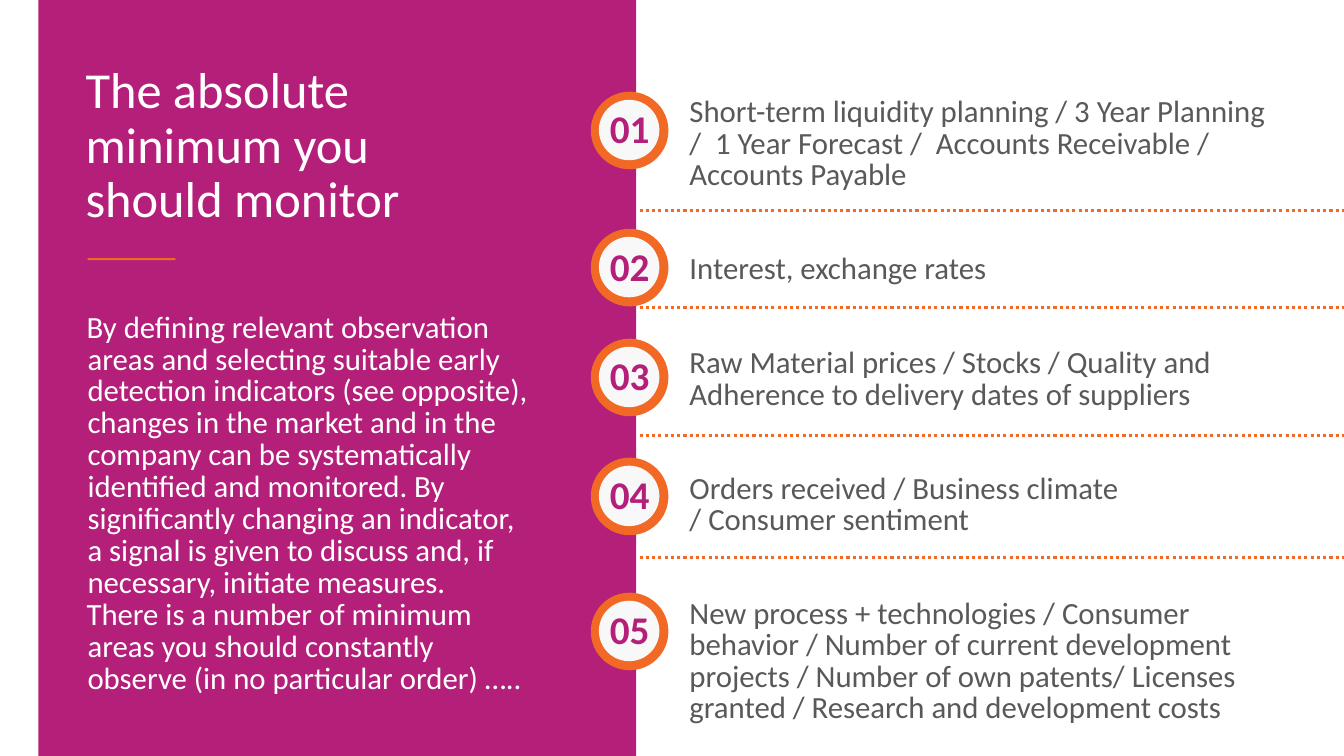
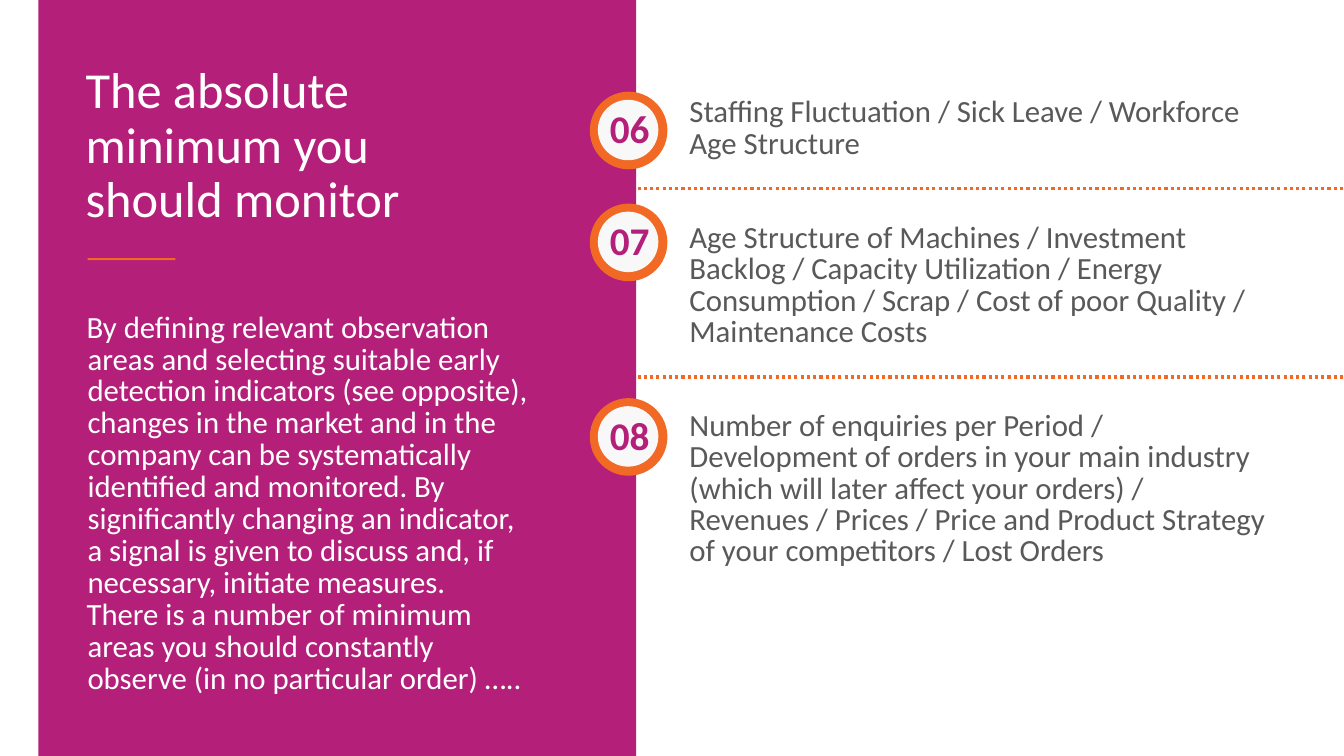
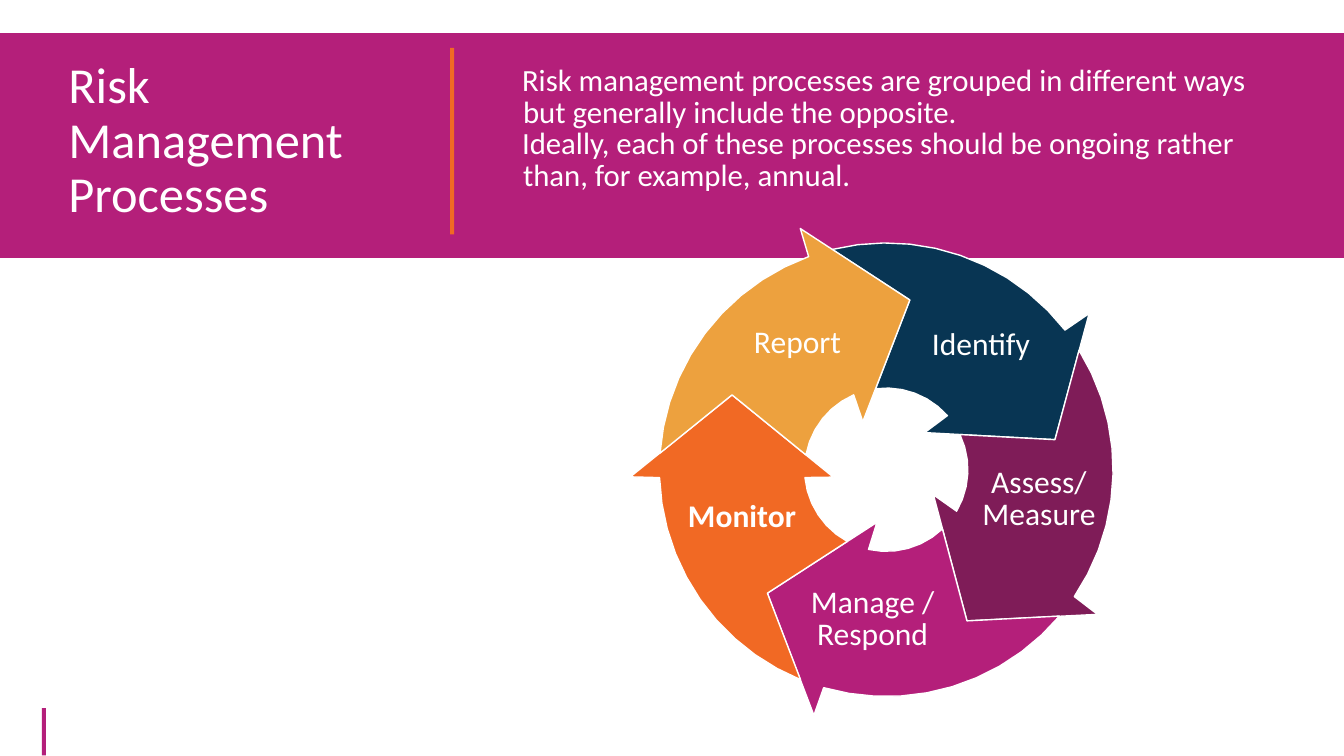
"""Build three slides on risk indicators and the risk management cycle."""
from dataclasses import dataclass
from math import cos, radians, sin

from lxml.etree import SubElement
from pptx import Presentation
from pptx.dml.color import RGBColor as RGB
from pptx.enum.dml import MSO_LINE
from pptx.enum.shapes import MSO_CONNECTOR as CONN, MSO_SHAPE as SHAPE
from pptx.enum.text import MSO_ANCHOR as ANCHOR, PP_ALIGN as ALIGN
from pptx.oxml.ns import qn
from pptx.util import Inches, Pt


@dataclass(frozen=True)
class Theme:
    font: str = "Calibri"
    magenta: str = "B41F7A"
    orange: str = "F16924"
    navy: str = "083553"
    plum: str = "7F1C58"
    amber: str = "EDA13E"
    white: str = "FFFFFF"
    disc: str = "F8F8F8"
    grey: str = "595959"
    title: float = 36
    badge: float = 28
    label: float = 22.5
    body: float = 22
    title_leading: float = 0.9
    body_leading: Pt = Pt(22.8)
    row_leading: Pt = Pt(22.4)
    label_leading: Pt = Pt(23)


T = Theme()


def add_block(shapes, kind, box, color):
    """Add a filled shape without outline or shadow."""
    sp = shapes.add_shape(kind, *map(Inches, box))
    sp.shadow.inherit = False
    sp.fill.solid()
    sp.fill.fore_color.rgb = RGB.from_string(color)
    sp.line.fill.background()
    return sp


def add_text(shapes, box, groups, size, color, leading=None, gap=0, bold=False, align=ALIGN.LEFT, hang=0):
    """Add a text box of paragraph groups, with a gap before each group but the first."""
    tf = shapes.add_textbox(*map(Inches, box)).text_frame
    tf.word_wrap = True
    p = None
    for group in groups:
        for j, text in enumerate(group):
            first = p is None
            p = tf.paragraphs[0] if first else tf.add_paragraph()
            p.alignment = align
            if leading:
                p.line_spacing = leading
            if gap and j == 0 and not first:
                p.space_before = gap
            if hang:
                pPr = p._p.get_or_add_pPr()
                pPr.set("marL", str(hang))
                pPr.set("indent", str(-hang))
            for k, part in enumerate(text.split("\v")):
                if k:
                    p.add_line_break()
                r = p.add_run()
                r.text = part
                r.font.name = T.font
                r.font.size = Pt(size)
                r.font.bold = bold
                r.font.color.rgb = RGB.from_string(color)
    return tf


prs = Presentation()
prs.slide_width, prs.slide_height = Inches(13.33), Inches(7.5)
blank = prs.slide_layouts[6]
hang = Inches(0.01)

intro = [[
    "By defining relevant observation areas and selecting suitable early detection indicators "
    "(see opposite), changes in the market and in the company can be systematically identified "
    "and monitored. By significantly changing an indicator, a signal is given to discuss and, "
    "if necessary, initiate measures.",
    "There is a number of minimum areas you should constantly observe (in no particular order) …..",
]]

indicator_slides = [
    {
        "first": 1,
        "badge_x": 5.86,
        "badges": [0.91, 2.27, 3.36, 4.54, 5.88],
        "rule_x": 5.97,
        "rules": [2.09, 3.05, 4.32, 5.53],
        "height": 6.4,
        "rows": [
            ["Short-term liquidity planning / 3 Year Planning /  1 Year Forecast /  "
             "Accounts Receivable / Accounts Payable"],
            ["Interest, exchange rates"],
            ["Raw Material prices / Stocks / Quality and Adherence to delivery dates of suppliers"],
            ["Orders received / Business climate", "/ Consumer sentiment"],
            ["New process + technologies / Consumer behavior / Number of current development "
             "projects / Number of own patents/ Licenses granted / Research and development costs"],
        ],
    },
    {
        "first": 6,
        "badge_x": 5.85,
        "badges": [0.91, 2.02, 3.95],
        "rule_x": 5.95,
        "rules": [1.87, 3.74],
        "height": 5.35,
        "rows": [
            ["Staffing Fluctuation / Sick Leave / Workforce Age Structure"],
            ["Age Structure of Machines / Investment Backlog / Capacity Utilization / Energy "
             "Consumption / Scrap / Cost of poor Quality /  Maintenance Costs"],
            ["Number of enquiries per Period / Development of orders in your main industry "
             "(which will later affect your orders) / Revenues / Prices / Price and Product "
             "Strategy of your competitors / Lost Orders"],
        ],
    },
]

ring_d, disc_d, rim = 0.77, 0.6, 0.08

for content in indicator_slides:
    shapes = prs.slides.add_slide(blank).shapes
    for y in content["rules"]:
        rule = shapes.add_connector(
            CONN.STRAIGHT, Inches(content["rule_x"]), Inches(y), Inches(13.33), Inches(y))
        rule.line.color.rgb = RGB.from_string(T.orange)
        rule.line.width = Pt(2.25)
        rule.line.dash_style = MSO_LINE.ROUND_DOT
        SubElement(rule._element.spPr, qn("a:effectLst"))

    add_text(shapes, (6.74, 0.92, 5.93, content["height"]), content["rows"],
             T.body, T.grey, T.row_leading, gap=2 * T.row_leading)
    add_block(shapes, SHAPE.RECTANGLE, (0.38, 0, 5.93, 7.5), T.magenta)
    add_text(shapes, (0.75, 0.6, 4, 3.33), [["The absolute minimum you should monitor"]],
             T.title, T.white, T.title_leading)
    add_text(shapes, (0.76, 3.05, 4.61, 4.4), intro, T.body, T.white, T.body_leading, hang=hang)
    add_block(shapes, SHAPE.RECTANGLE, (0.87, 2.56, 0.87, 0.02), T.orange)

    x = content["badge_x"]
    for number, y in enumerate(content["badges"], content["first"]):
        badge = shapes.add_group_shape().shapes
        add_block(badge, SHAPE.OVAL, (x, y, ring_d, ring_d), T.orange)
        add_block(badge, SHAPE.OVAL, (x + rim, y + rim, disc_d, disc_d), T.disc)
        add_text(badge, (5.95, y + rim, 0.61, 0.57), [[f"{number:02d}"]], T.badge, T.magenta, bold=True)

shapes = prs.slides.add_slide(blank).shapes
marker = add_block(shapes, SHAPE.RECTANGLE, (0.2, 7.24, 0.47, 0.04), T.magenta)
marker.rotation = 270
blank.shapes._spTree.append(marker._element)

add_block(shapes, SHAPE.RECTANGLE, (0, 0.33, 13.33, 2.23), T.magenta)
add_text(shapes, (5.08, 0.6, 7.67, 1.96), [[
    "Risk management processes are grouped in different ways but generally include the opposite.",
    "Ideally, each of these processes should be ongoing rather than, for example, annual.",
]], T.body, T.white, T.body_leading, hang=hang)
add_text(shapes, (0.58, 0.55, 3.32, 2.31), [["Risk Management Processes"]], T.title, T.white, T.title_leading)
divider = add_block(shapes, SHAPE.RECTANGLE, (3.56, 1.38, 1.85, 0.04), T.orange)
divider.rotation = 90

steps = [
    ("Identify", T.navy, (9, 3.11, 1.46, 0.58)),
    ("Assess/ Measure", T.plum, (9.43, 4.51, 1.75, 0.9)),
    ("Manage /\vRespond", T.magenta, (7.77, 5.7, 1.77, 0.9)),
    ("Monitor", T.orange, (6.59, 4.82, 1.54, 0.58)),
    ("Report", T.amber, (7.25, 3.09, 1.32, 0.58)),
]
center_x, center_y, outer_r, inner_r = 8.79, 4.66, 2.25, 0.81
turn = 360 / len(steps)
outer_steps, inner_steps = 10, 6
outer_arc = [(outer_r, -103.8 + 65.8 * i / outer_steps) for i in range(outer_steps + 1)]
inner_arc = [(inner_r, -41.5 - 56 * i / inner_steps) for i in range(inner_steps + 1)]
tip_r, tip_angle = 1.7, -10.1
head = [(2.54, -37.6), (tip_r, tip_angle), (0.53, -44)]
arrow = outer_arc + head + inner_arc + [(tip_r, tip_angle - turn)]

cycle = shapes.add_group_shape().shapes
for i, (label, color, box) in enumerate(steps):
    points = [
        (Inches(center_x + d * cos(radians(a + i * turn))), Inches(center_y + d * sin(radians(a + i * turn))))
        for d, a in arrow
    ]
    outline = cycle.build_freeform(*points[0])
    outline.add_line_segments(points[1:], close=True)
    sp = outline.convert_to_shape()
    sp.shadow.inherit = False
    sp.fill.solid()
    sp.fill.fore_color.rgb = RGB.from_string(color)
    sp.line.color.rgb = RGB.from_string(T.white)
    sp.line.width = Pt(1)

for label, color, box in steps:
    leading = T.label_leading if "/" in label else None
    tf = add_text(cycle, box, [[label]], T.label, T.white, leading,
                  bold=label == "Monitor", align=ALIGN.CENTER)
    tf.vertical_anchor = ANCHOR.MIDDLE

prs.save("out.pptx")
